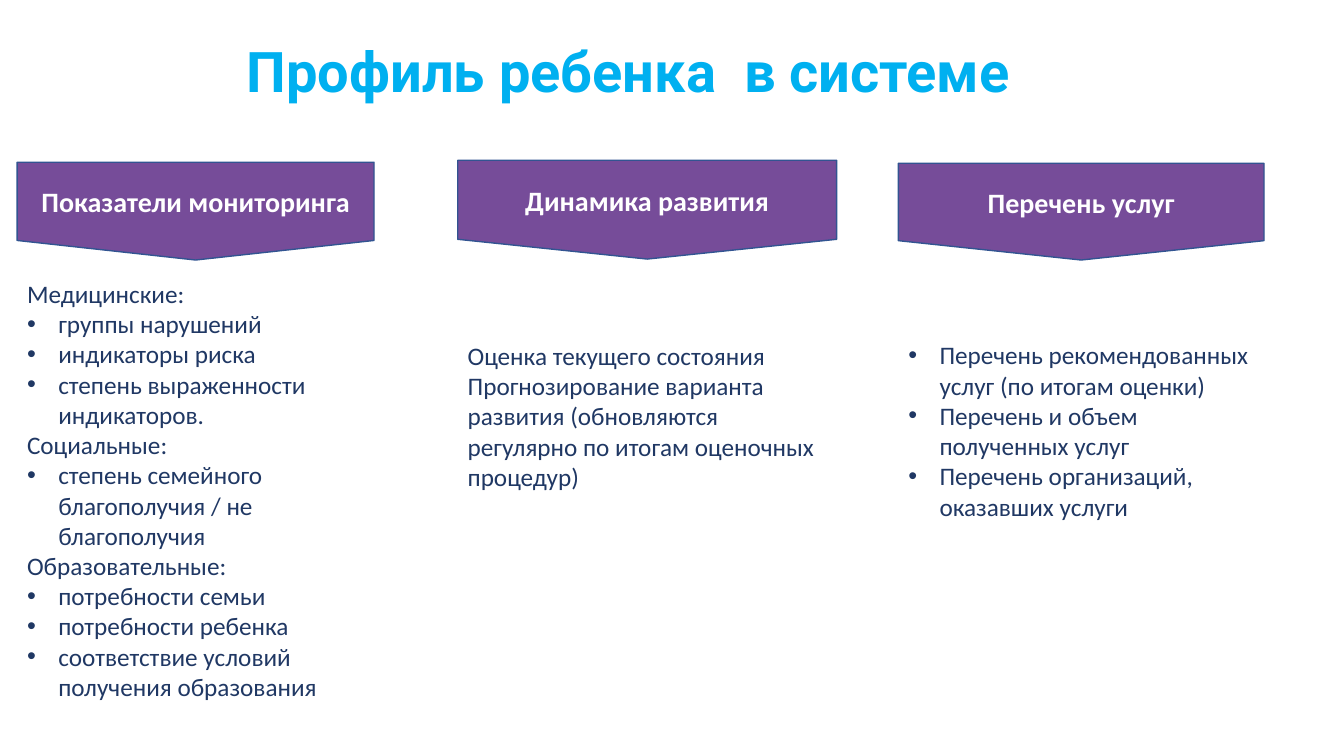
from dataclasses import dataclass
from pptx import Presentation
from pptx.dml.color import RGBColor as Rgb
from pptx.enum.shapes import MSO_SHAPE as Kind
from pptx.enum.text import MSO_ANCHOR as Anchor, PP_ALIGN as Align
from pptx.oxml.ns import qn
from pptx.util import Inches, Pt
from lxml.etree import SubElement as Sub


@dataclass(frozen=True)
class Theme:
    sky: str = "00B0F0"
    plum: str = "764C99"
    edge: str = "325491"
    navy: str = "203864"
    white: str = "FFFFFF"
    head: str = "Roboto"
    body: str = "Calibri"
    big: int = 40
    mid: int = 20
    small: int = 18


THEME = Theme()
LEFT, PITCH, ROW = 0.17, 4.37, 1
INDENT = 0.31

TITLE = "Профиль ребенка  в системе"
COLUMNS = [
    {"name": "Показатели мониторинга",
     "top": (1.61, 0.81, 0.97), "area": (2.74, 0.78, 4.54), "foot": 0.35,
     "lines": ["Медицинские:", "• группы нарушений", "• индикаторы риска",
               "• степень выраженности индикаторов.", "Социальные:",
               "• степень семейного благополучия / не благополучия",
               "Образовательные:", "• потребности семьи",
               "• потребности ребенка",
               "• соответствие условий получения образования"]},
    {"name": "Динамика развития",
     "top": (1.59, 0.86, 0.98), "area": (2.49, 0.86, 3.57), "foot": 0.35,
     "lines": ["Оценка текущего состояния",
               "Прогнозирование варианта развития (обновляются регулярно "
               "по итогам оценочных процедур)"]},
    {"name": "Перечень услуг",
     "top": (1.62, 0.83, 0.96), "area": (2.32, 0.83, 3.9), "foot": 0.05,
     "lines": ["• Перечень рекомендованных услуг (по итогам оценки)",
               "• Перечень и объем полученных услуг",
               "• Перечень организаций, оказавших услуги"]},
]


def place(col, row, wide, tall):
    return (Inches(LEFT + col * PITCH), Inches(row * ROW),
            Inches(wide * PITCH), Inches(tall * ROW))


def apply(item, form):
    for key, value in form.items():
        setattr(item, key, value)


def write(para, text, face, size, color, bold=False):
    run = para.add_run()
    run.text = text
    apply(run.font, {"name": face, "size": Pt(size), "bold": bold})
    run.font.color.rgb = Rgb.from_string(color)


def mark(para):
    props = para._p.get_or_add_pPr()
    props.set("marL", str(Inches(INDENT)))
    props.set("indent", str(-Inches(INDENT)))
    Sub(props, qn("a:buFont")).set("typeface", "Arial")
    Sub(props, qn("a:buChar")).set("char", "•")


def title(slide):
    box = slide.shapes.add_textbox(Inches(0.67), Inches(0.14),
                                   Inches(10.72), Inches(0.95))
    apply(box.text_frame, {"word_wrap": True, "vertical_anchor": Anchor.BOTTOM,
                           "margin_left": Inches(0.5)})
    para = box.text_frame.paragraphs[0]
    apply(para, {"alignment": Align.CENTER, "line_spacing": 0.9})
    write(para, TITLE, THEME.head, THEME.big, THEME.sky, True)


def banner(slide, text, spot):
    shape = slide.shapes.add_shape(Kind.FLOWCHART_OFFPAGE_CONNECTOR, *spot)
    shape.shadow.inherit = False
    shape.fill.solid()
    shape.fill.fore_color.rgb = Rgb.from_string(THEME.plum)
    shape.line.color.rgb = Rgb.from_string(THEME.edge)
    shape.line.width = Pt(1)
    apply(shape.text_frame, {"word_wrap": True,
                             "vertical_anchor": Anchor.MIDDLE})
    para = shape.text_frame.paragraphs[0]
    para.alignment = Align.CENTER
    write(para, text, THEME.body, THEME.mid, THEME.white, True)


def notes(slide, lines, spot, foot):
    frame = slide.shapes.add_textbox(*spot).text_frame
    apply(frame, {"word_wrap": True, "vertical_anchor": Anchor.MIDDLE,
                  "margin_bottom": Inches(foot)})
    for i, line in enumerate(lines):
        para = frame.add_paragraph() if i else frame.paragraphs[0]
        if line.startswith("• "):
            mark(para)
        write(para, line.removeprefix("• "), THEME.body, THEME.small,
              THEME.navy)


def main():
    deck = Presentation()
    apply(deck, {"slide_width": Inches(13.33), "slide_height": Inches(7.5)})
    slide = deck.slides.add_slide(deck.slide_layouts[6])
    title(slide)
    for i, col in enumerate(COLUMNS):
        banner(slide, col["name"], place(i, *col["top"]))
        notes(slide, col["lines"], place(i, *col["area"]), col["foot"])
    deck.save("out.pptx")


if __name__ == "__main__":
    main()
